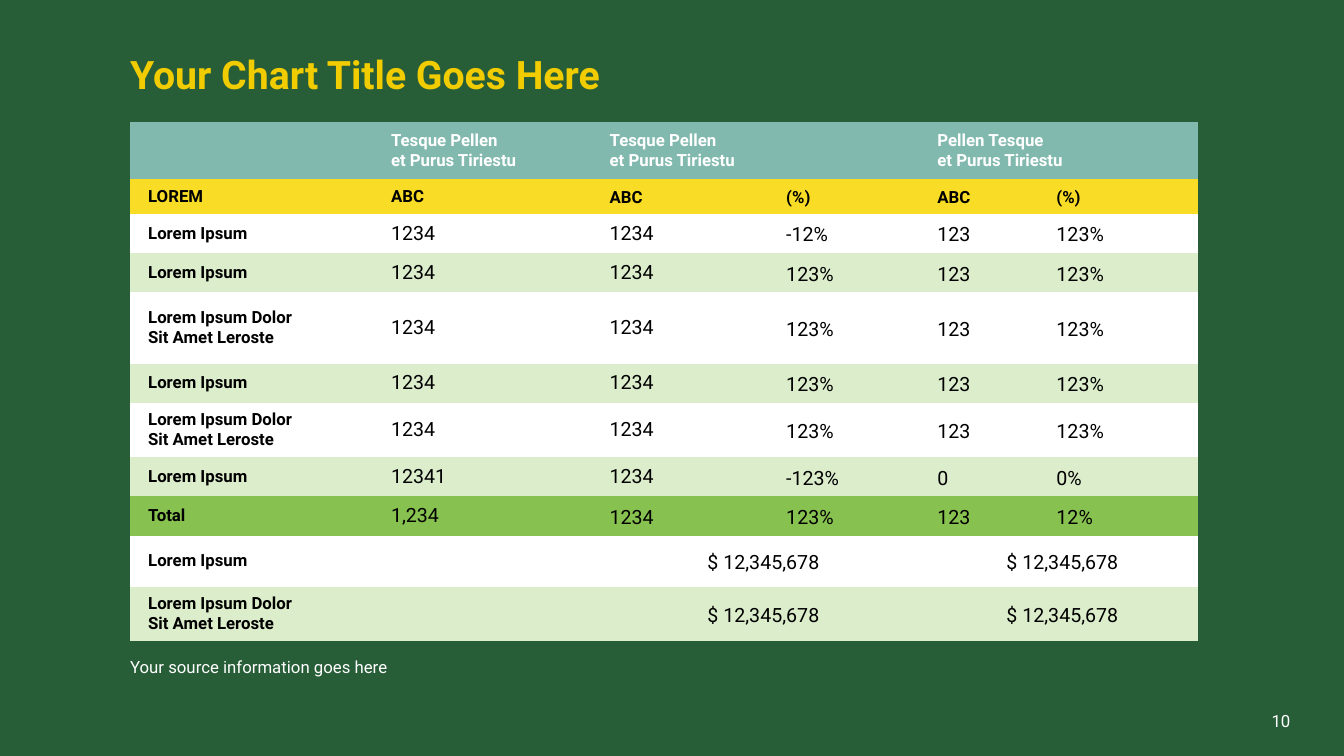
from dataclasses import dataclass

from pptx import Presentation
from pptx.dml.color import RGBColor
from pptx.enum.text import MSO_ANCHOR as Anchor, MSO_AUTO_SIZE as AutoSize, PP_ALIGN as Align
from pptx.oxml.ns import qn
from pptx.util import Cm, Pt

COLORS = {
    "page": "275D37",
    "title": "F1CC00",
    "header": "82B9AE",
    "units": "F9DC26",
    "white": "FFFFFF",
    "pale": "DCEDCB",
    "total": "87C250",
    "black": "000000",
}
FONT = "Roboto"
PLAIN_TABLE_STYLE = "{2D5ABB26-0587-4C30-8999-92F81FD0307C}"
COLUMN_WIDTHS = [6.32, 5.51, 4.45, 3.81, 3.0, 3.81]
LABEL_INDENT = 0.2
LOOSE_SPACING = 1.15


@dataclass
class Row:
    fill: str
    height: float
    texts: list
    kind: str = "data"
    loose_from: int = 3


SHORT = "Lorem Ipsum"
LONG = "Lorem Ipsum Dolor\nSit Amet Leroste"
TESQUE = "Tesque Pellen\net Purus Tiriestu"
PELLEN = "Pellen Tesque\net Purus Tiriestu"
AMOUNT = "$ 12,345,678"
USUAL = ["1234", "1234", "123%", "123", "123%"]
SUMS = ["", AMOUNT, "", AMOUNT, ""]

ROWS = [
    Row("header", 1.44, ["", TESQUE, TESQUE, "", PELLEN, ""], "header", 6),
    Row("units", 0.88, ["LOREM", "ABC", "ABC", "(%)", "ABC", "(%)"], "units", 2),
    Row("white", 0.99, [SHORT, "1234", "1234", "-12%", "123", "123%"]),
    Row("pale", 0.99, [SHORT, *USUAL]),
    Row("white", 1.79, [LONG, *USUAL]),
    Row("pale", 0.99, [SHORT, *USUAL]),
    Row("white", 1.37, [LONG, *USUAL]),
    Row("pale", 0.99, [SHORT, "12341", "1234", "-123%", "0", "0%"]),
    Row("total", 0.99, ["Total", "1,234", "1234", "123%", "123", "12%"], loose_from=2),
    Row("white", 1.28, [SHORT, *SUMS], "sums", 2),
    Row("pale", 1.37, [LONG, *SUMS], "sums", 2),
]


def rgb(name):
    return RGBColor.from_string(COLORS[name])


def write(para, text, size, color, bold=False, align=Align.LEFT, spacing=1.0):
    para.alignment = align
    para.line_spacing = spacing
    para.space_before = Pt(0)
    for index, line in enumerate(text.split("\n")):
        if index:
            para.add_line_break()
        span = para.add_run()
        span.text = line
        span.font.name = FONT
        span.font.size = Pt(size)
        span.font.bold = bold
        span.font.color.rgb = rgb(color)


def set_frame(box, margin, anchor):
    frame = box.text_frame
    frame.word_wrap = True
    frame.auto_size = AutoSize.NONE
    frame.vertical_anchor = anchor
    frame.margin_left = frame.margin_right = Cm(margin)
    frame.margin_top = frame.margin_bottom = Cm(margin / 2)
    return frame.paragraphs[0]


def add_title(page, text):
    title = page.shapes.title
    title.left, title.top, title.width, title.height = Cm(3.28), Cm(1.4), Cm(26.9), Cm(1.9)
    write(set_frame(title, 0, Anchor.TOP), text, 28, "title", bold=True, spacing=0.9)


def add_note(page, text, left, top, width, height, margin, anchor, align, spacing):
    box = page.shapes.add_textbox(Cm(left), Cm(top), Cm(width), Cm(height))
    write(set_frame(box, margin, anchor), text, 12, "white", align=align, spacing=spacing)


def fill_cell(cell, row, column, text):
    cell.fill.solid()
    cell.fill.fore_color.rgb = rgb(row.fill)
    cell.vertical_anchor = Anchor.MIDDLE
    if not text:
        return
    is_label = column == 0
    strong = is_label or row.kind in ("header", "units")
    para = cell.text_frame.paragraphs[0]
    write(
        para,
        text,
        12 if strong else 14,
        "white" if row.kind == "header" else "black",
        bold=strong,
        align=Align.CENTER if row.kind == "sums" and not is_label else Align.LEFT,
        spacing=LOOSE_SPACING if column >= row.loose_from else 1.0,
    )
    if is_label:
        para._p.get_or_add_pPr().set("marL", str(Cm(LABEL_INDENT)))


def add_figures_table(page):
    frame = page.shapes.add_table(
        len(ROWS), len(COLUMN_WIDTHS), Cm(3.28), Cm(3.07),
        Cm(sum(COLUMN_WIDTHS)), Cm(sum(row.height for row in ROWS)),
    )
    table = frame.table
    table.first_row = table.horz_banding = False
    for style in table._tbl.iter(qn("a:tableStyleId")):
        style.text = PLAIN_TABLE_STYLE
    for column, width in zip(table.columns, COLUMN_WIDTHS):
        column.width = Cm(width)
    for index, row in enumerate(ROWS):
        table.rows[index].height = Cm(row.height)
        for column, text in enumerate(row.texts):
            fill_cell(table.cell(index, column), row, column, text)
        if row.kind in ("header", "sums"):
            for start in (2, 4):
                table.cell(index, start).merge(table.cell(index, start + 1))


def main():
    deck = Presentation()
    deck.slide_width, deck.slide_height = Cm(33.87), Cm(19.05)
    page = deck.slides.add_slide(deck.slide_layouts[5])
    page.background.fill.solid()
    page.background.fill.fore_color.rgb = rgb("page")
    add_title(page, "Your Chart Title Goes Here")
    add_note(page, "10", 24.5, 17.65, 8.27, 1.02, 0.25, Anchor.MIDDLE, Align.RIGHT, 1.0)
    add_note(page, "Your source information goes here", 3.28, 16.6, 26.9, 0.6, 0,
             Anchor.TOP, Align.LEFT, 0.9)
    add_figures_table(page)
    deck.save("out.pptx")


if __name__ == "__main__":
    main()
